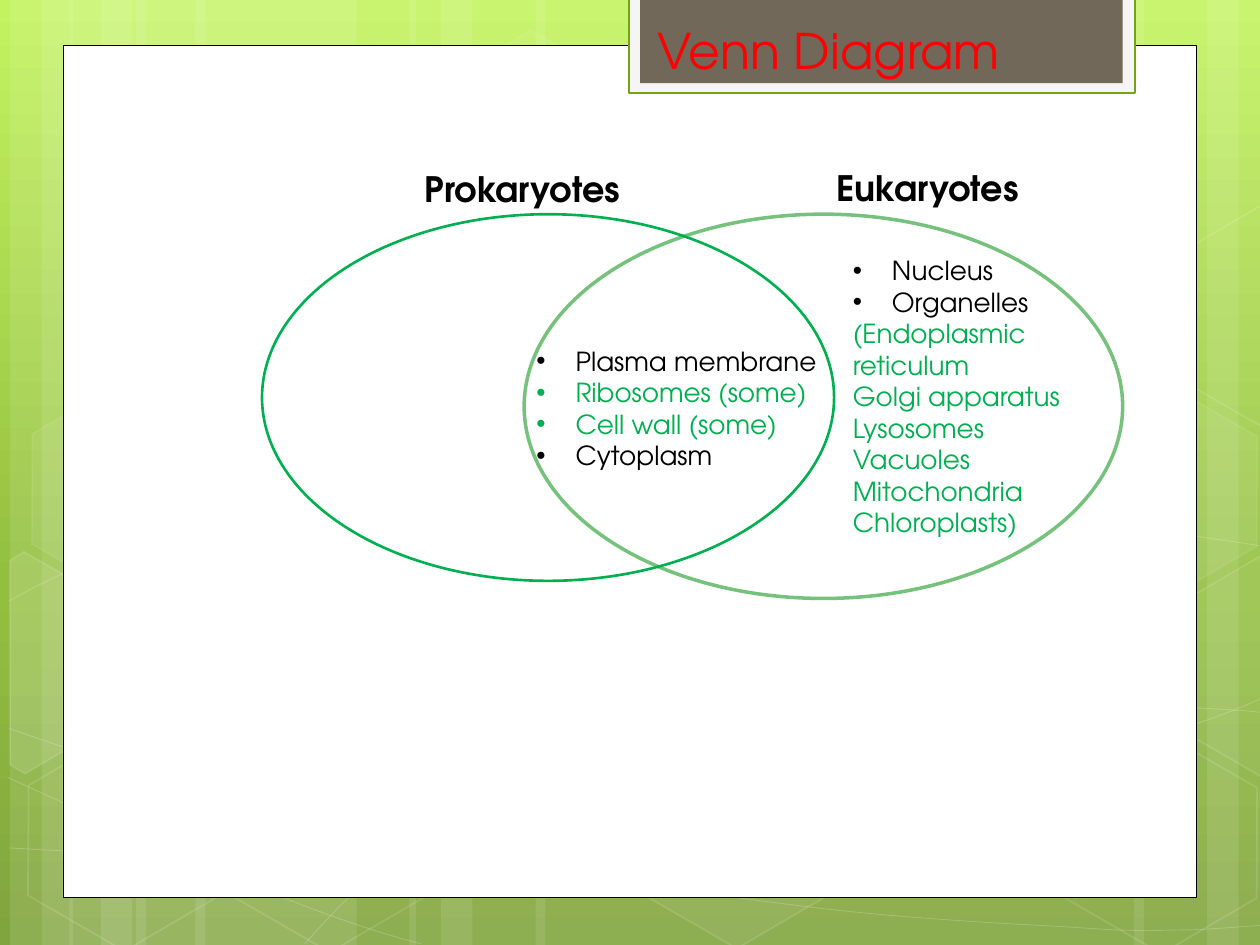
from copy import deepcopy

from lxml import etree
from pptx import Presentation
from pptx.dml.color import RGBColor
from pptx.enum.shapes import MSO_SHAPE
from pptx.enum.text import MSO_ANCHOR, MSO_AUTO_SIZE
from pptx.oxml.ns import qn
from pptx.util import Inches, Pt

RECT, OVAL, HEXAGON = MSO_SHAPE.RECTANGLE, MSO_SHAPE.OVAL, MSO_SHAPE.HEXAGON
FIT, BOTTOM, TOP = MSO_AUTO_SIZE.SHAPE_TO_FIT_TEXT, MSO_ANCHOR.BOTTOM, MSO_ANCHOR.TOP
FONT = "TeX Gyre Adventor"
WHITE, BLACK, GREEN, RED = "FFFFFF", "000000", "00B050", "FF0000"
W, H = 10, 7.5

BACKGROUND = [(0, "C3F35F"), (0.62, "93BF3F"), (1, "81A53E")]
STRIPES = [(1.08, 1.75, 0), (0.08, 0.5, 0), (0.33, 0.83, 0), (1.55, 1.75, 0),
           (0.55, 0.5, 0), (0.8, 0.83, 0), (7.33, 1.75, 180), (9.58, 0.5, 180),
           (9, 0.83, 180), (4.25, 3.08, 0), (3.25, 0.5, 0), (3.5, 0.83, 0)]
STRAIGHT_END = (9.53, 5.62)
CURVES = [
    [(0.07, 6.73), (0.61, 6.76), (1.15, 6.79), (1.9, 6.78), (2.65, 6.77), (3.58, 6.75),
     (4.58, 6.65), (5.58, 6.55), (7, 6.36), (7.92, 6.17), (8.83, 5.98), (9.77, 5.68),
     (10.07, 5.51)],
    [(0.07, 4.77), (0.36, 4.61), (0.65, 4.46), (1.21, 4.31), (1.78, 4.16), (2.59, 3.94),
     (3.47, 3.87), (4.36, 3.8), (5.44, 3.79), (6.54, 3.87), (7.64, 3.95), (9.47, 4.26),
     (10.07, 4.34)],
    [(0.06, 6.17), (1.27, 6.72), (2.47, 7.27), (3.34, 7.49)],
    [(0.07, 5.78), (0.38, 5.89), (0.7, 6), (1.28, 6.16), (1.86, 6.31), (2.73, 6.56),
     (3.57, 6.73), (4.4, 6.9), (5.45, 7.08), (6.28, 7.18), (7.11, 7.29), (8, 7.33),
     (8.53, 7.36), (9.05, 7.4), (9.19, 7.38), (9.45, 7.38), (9.71, 7.37), (9.89, 7.35),
     (10.07, 7.34)],
    [(2.42, 7.49), (2.6, 7.29), (2.78, 7.09), (3.02, 6.91), (3.26, 6.73), (3.6, 6.53),
     (3.88, 6.39), (4.16, 6.25), (4.33, 6.19), (4.7, 6.09), (5.06, 5.99), (5.73, 5.85),
     (6.08, 5.78), (6.44, 5.71), (6.49, 5.71), (6.8, 5.69), (7.11, 5.66), (7.6, 5.63),
     (7.94, 5.62), (8.29, 5.61), (8.86, 5.62), (8.86, 5.62), STRAIGHT_END, (9.71, 5.63),
     (9.88, 5.64), (9.97, 5.65), (10.06, 5.66), (10.03, 5.65), (10.06, 5.66)],
]
HEXAGONS = [(3.34, 0.36, 4, 8), (4.97, 5.89, 6, 12), (0.11, 5.91, None, 12),
            (0.14, 3.12, 7, 8), (1.74, 5.92, None, 12), (8.34, 5.93, None, 12),
            (8.34, 3.14, 7, 8)]
CUT_HEXAGONS = [
    ([(0.08, 4.45), (0.19, 4.38), (0.96, 4.82), (0.95, 5.7), (0.2, 6.14), (0.08, 6.07)], 10),
    ([(9.26, 4.85), (10.01, 4.41), (10.09, 4.46), (10.09, 6.13), (10.02, 6.17),
      (9.26, 5.73)], 4),
    ([(9.26, 2.07), (10.01, 1.63), (10.1, 1.68), (10.09, 3.35), (10.02, 3.39),
      (9.26, 2.95)], None),
]
PANELS = [((0.5, 0.36, 9, 6.76), WHITE, (BLACK, 0.5)),
          ((4.99, -0.02, 4.02, 0.76), "F5F5F5", ("74A510", 1.25)),
          ((5.08, -0.02, 3.83, 0.68), "71685A", None)]
EUKARYOTE_OVAL = (4.16, 1.7, 4.75, 3.05), "76C27D", 2
PROKARYOTE_OVAL = (2.08, 1.7, 4.54, 2.91), GREEN, 1.5
HEADINGS = [("Prokaryotes", (3.27, 1.28, 1.79, 0.44)),
            ("Eukaryotes", (6.54, 1.27, 1.68, 0.44))]
SHARED = [("Plasma membrane", BLACK, True), ("Ribosomes (some)", GREEN, True),
          ("Cell wall (some)", GREEN, True), ("Cytoplasm", BLACK, True)]
EUKARYOTE_ONLY = [("Nucleus", BLACK, True), ("Organelles", BLACK, True)] + [
    (name, GREEN, False) for name in (
        "(Endoplasmic reticulum", "Golgi apparatus", "Lysosomes", "Vacuoles",
        "Mitochondria", "Chloroplasts)")]


def rgb(value):
    return RGBColor.from_string(value)


def paint(fill, color, alpha=None):
    if color is None:
        fill.background()
        return
    fill.solid()
    fill.fore_color.rgb = rgb(color)
    if alpha is not None:
        clr = fill._xPr.find(".//" + qn("a:srgbClr"))
        etree.SubElement(clr, qn("a:alpha")).set("val", str(alpha * 1000))


def style(sp, color=None, alpha=None, line=None, line_alpha=None):
    sp.shadow.inherit = False
    paint(sp.fill, color, alpha)
    if line is None:
        sp.line.fill.background()
    else:
        paint(sp.line.fill, line[0], line_alpha)
        sp.line.width = Pt(line[1])


def add_shape(s, kind, box, **look):
    sp = s.shapes.add_shape(kind, *map(Inches, box))
    style(sp, **look)
    return sp


def add_outline(s, points, close, **look):
    pts = [(Inches(x), Inches(y)) for x, y in points]
    builder = s.shapes.build_freeform(*pts[0])
    builder.add_line_segments(pts[1:], close=close)
    sp = builder.convert_to_shape()
    style(sp, **look)
    return sp


def add_curve(s, points):
    sp = add_outline(s, points, False, line=(WHITE, 0.5), line_alpha=20)
    segments = sp._element.findall(".//" + qn("a:lnTo"))
    i = 0
    while i < len(segments):
        if points[i + 1] == STRAIGHT_END:
            i += 1
            continue
        first, second, third = segments[i:i + 3]
        first.tag = qn("a:cubicBezTo")
        for other in (second, third):
            first.append(other[0])
            other.getparent().remove(other)
        i += 3


def add_text(s, box, lines, size, bold=False, wrap=True, fit=True, anchor=TOP):
    tf = s.shapes.add_textbox(*map(Inches, box)).text_frame
    tf.word_wrap = wrap
    tf.vertical_anchor = anchor
    if fit:
        tf.auto_size = FIT
    for i, (text, color, bulleted) in enumerate(lines):
        p = tf.add_paragraph() if i else tf.paragraphs[0]
        p.text = text
        p.font.name, p.font.size, p.font.bold = FONT, Pt(size), bold
        p.font.color.rgb = rgb(color)
        if bulleted:
            pPr = p._p.get_or_add_pPr()
            pPr.set("marL", str(Inches(0.31)))
            pPr.set("indent", str(-Inches(0.31)))
            font, char = etree.Element(qn("a:buFont")), etree.Element(qn("a:buChar"))
            font.set("typeface", "Arial")
            char.set("char", "•")
            pPr.insert(0, font)
            pPr.insert(1, char)


def add_background(s):
    fill = s.background.fill
    fill.gradient()
    fill.gradient_angle = 270
    stops = s._element.find(".//" + qn("a:gsLst"))
    stops.append(deepcopy(stops[0]))
    for stop, (position, color) in zip(fill.gradient_stops, BACKGROUND):
        stop.position = position
        stop.color.rgb = rgb(color)


def add_decoration(s):
    for left, width, turn in STRIPES:
        sp = add_shape(s, RECT, (left, 0, width, H), color=WHITE, alpha=10)
        sp.rotation = turn
    for points in CURVES:
        add_curve(s, points)
    for left, top, alpha, line_alpha in HEXAGONS:
        sp = add_shape(s, HEXAGON, (left, top, 1.75, 1.52), color=WHITE if alpha else None,
                       alpha=alpha, line=(WHITE, 1), line_alpha=line_alpha)
        sp.adjustments[0] = 0.285
        sp.rotation = 30
    for points, alpha in CUT_HEXAGONS:
        add_outline(s, points, True, color=WHITE if alpha else None, alpha=alpha,
                    line=(WHITE, 1), line_alpha=12)
    for box, color, line in PANELS:
        add_shape(s, RECT, box, color=color, line=line)


def add_oval(s, box, color, width):
    add_shape(s, OVAL, box, line=(color, width))


def main():
    prs = Presentation()
    prs.slide_width, prs.slide_height = Inches(W), Inches(H)
    s = prs.slides.add_slide(prs.slide_layouts[6])
    add_background(s)
    add_decoration(s)
    add_oval(s, *EUKARYOTE_OVAL)
    for text, box in HEADINGS:
        add_text(s, box, [(text, BLACK, False)], 20, bold=True, wrap=False)
    add_text(s, (4.16, 2.69, 2.44, 1.11), SHARED, 15)
    add_text(s, (6.67, 1.97, 2.25, 2.37), EUKARYOTE_ONLY, 15)
    add_text(s, (5.12, 0, 3.67, 0.68), [("Venn Diagram", RED, False)], 28,
             fit=False, anchor=BOTTOM)
    add_oval(s, *PROKARYOTE_OVAL)
    prs.save("out.pptx")


if __name__ == "__main__":
    main()
